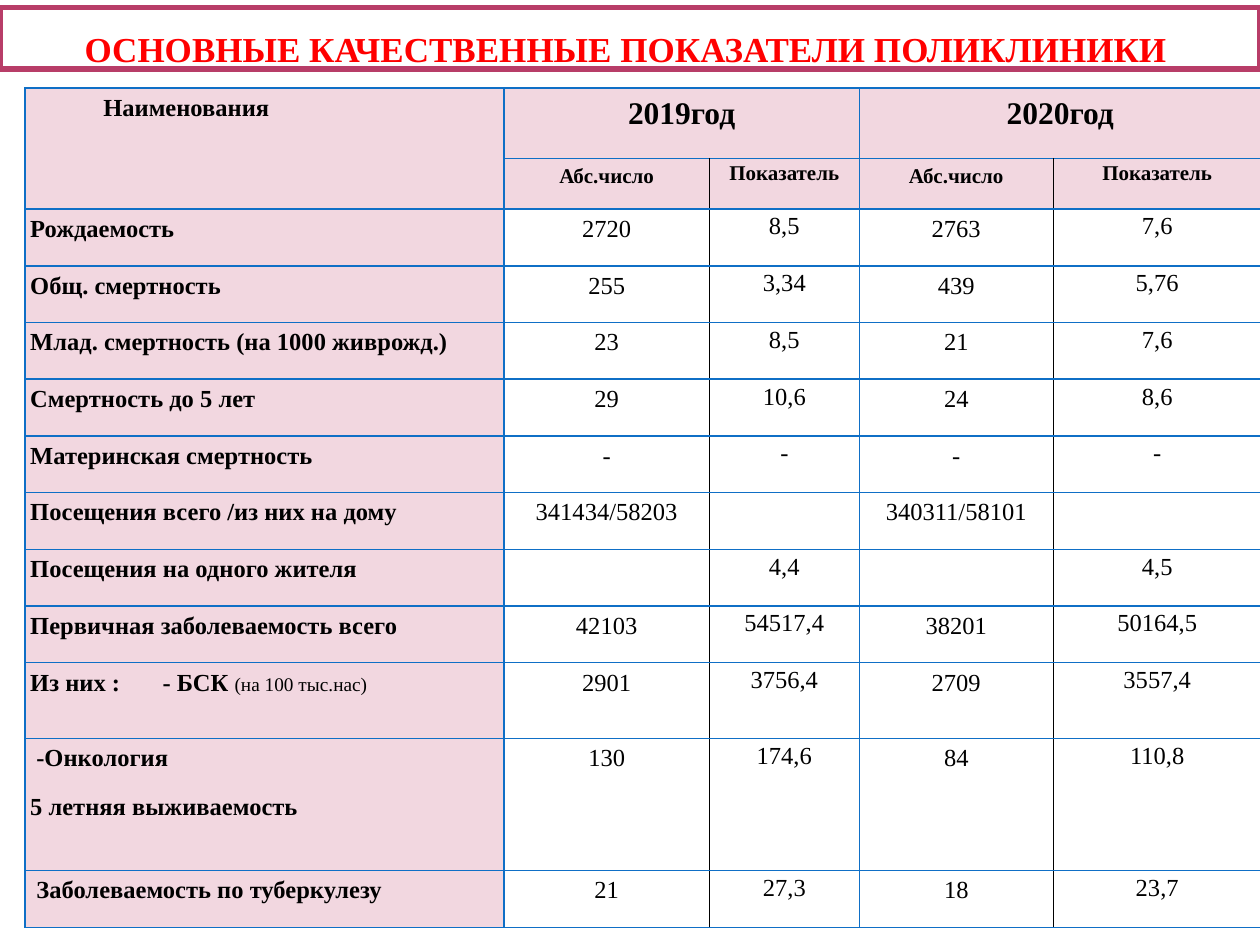
from lxml import etree
from pptx import Presentation
from pptx import util as u
from pptx.dml.color import RGBColor
from pptx.enum import shapes, text
from pptx.oxml import ns

FONT = "Times New Roman"
BLUE, BLACK, PINK = "0F6FC6", "000000", "F2D7E0"


def color(value):
    return RGBColor.from_string(value)


def style(font, size, bold, value=BLACK):
    font.name, font.size, font.bold = FONT, u.Pt(size), bold
    font.color.rgb = color(value)


presentation = Presentation()
presentation.slide_width, presentation.slide_height = u.Inches(10), u.Inches(7.5)
slide = presentation.slides.add_slide(presentation.slide_layouts[6])

title = slide.shapes.add_shape(
    shapes.MSO_SHAPE.RECTANGLE, 0, u.Inches(0.06), presentation.slide_width, u.Inches(0.49))
title.shadow.inherit = False
title.fill.solid()
title.fill.fore_color.rgb = color("FFFFFF")
title.line.color.rgb = color("B83D68")
title.line.width = u.Pt(3.15)
frame = title.text_frame
frame.word_wrap = True
frame.vertical_anchor = text.MSO_ANCHOR.BOTTOM
frame.margin_left = frame.margin_right = u.Inches(0.05)
frame.margin_top = frame.margin_bottom = 0
paragraph = frame.paragraphs[0]
paragraph.text = "ОСНОВНЫЕ КАЧЕСТВЕННЫЕ ПОКАЗАТЕЛИ ПОЛИКЛИНИКИ "
paragraph.alignment = text.PP_ALIGN.CENTER
style(paragraph.font, 20, True, "FF0000")

rows = [
    ["Наименования", "2019год", "", "2020год", ""],
    ["", "Абс.число", "Показатель", "Абс.число", "Показатель"],
    ["Рождаемость", "2720", "8,5", "2763", "7,6"],
    ["Общ. смертность", "255", "3,34", "439", "5,76"],
    ["Млад. смертность (на 1000 живрожд.)", "23", "8,5", "21", "7,6"],
    ["Смертность до 5 лет", "29", "10,6", "24", "8,6"],
    ["Материнская смертность", "-", "-", "-", "-"],
    ["Посещения всего /из них на дому", "341434/58203", "", "340311/58101", ""],
    ["Посещения на одного жителя", "", "4,4", "", "4,5"],
    ["Первичная заболеваемость всего", "42103", "54517,4", "38201", "50164,5"],
    ["Из них :\t- БСК |(на 100 тыс.нас)", "2901", "3756,4", "2709", "3557,4"],
    [" -Онкология\n5 летняя выживаемость", "130", "174,6", "84", "110,8"],
    [" Заболеваемость по туберкулезу", "21", "27,3", "18", "23,7"],
]
widths = [3.8, 1.63, 1.19, 1.54, 1.65]
heights = [0.56, 0.4] + [0.45] * 8 + [0.6, 1.05, 0.45]

table = slide.shapes.add_table(
    len(rows), len(widths), u.Inches(0.2), u.Inches(0.7),
    u.Inches(sum(widths)), u.Inches(sum(heights))).table
table.first_row = table.horz_banding = False
for column, width in zip(table.columns, widths):
    column.width = u.Inches(width)
for row, height in zip(table.rows, heights):
    row.height = u.Inches(height)
table.cell(0, 0).merge(table.cell(1, 0))
table.cell(0, 1).merge(table.cell(0, 2))
table.cell(0, 3).merge(table.cell(0, 4))

for r, values in enumerate(rows):
    for c, value in enumerate(values):
        cell = table.cell(r, c)
        is_rate = c in (2, 4)
        inner_side = {1: "R", 2: "L", 3: "R", 4: "L"}.get(c) if r else None
        properties = cell._tc.get_or_add_tcPr()
        for side in "LRTB":
            line = etree.SubElement(properties, ns.qn(f"a:ln{side}"), w=str(u.Pt(1)))
            fill = etree.SubElement(line, ns.qn("a:solidFill"))
            etree.SubElement(fill, ns.qn("a:srgbClr"), val=BLACK if side == inner_side else BLUE)
        if r < 2 or c == 0:
            cell.fill.solid()
            cell.fill.fore_color.rgb = color(PINK)
        else:
            cell.fill.background()
        cell.margin_left = cell.margin_right = u.Inches(0 if is_rate and r else 0.04)
        cell.margin_top = cell.margin_bottom = u.Inches(0 if is_rate and r else 0.02)
        if r == c == 0:
            cell.margin_left = u.Inches(0.62)
        size = 18 if r == 0 and c else 12 if r == 1 else 14
        bold = r < 2 or c == 0
        frame = cell.text_frame
        for index, content in enumerate(value.split("\n")):
            paragraph = frame.add_paragraph() if index else frame.paragraphs[0]
            if "\t" in content:
                tabs = etree.SubElement(paragraph._p.get_or_add_pPr(), ns.qn("a:tabLst"))
                etree.SubElement(tabs, ns.qn("a:tab"), pos=str(u.Inches(1.05)), algn="l")
            paragraph.alignment = text.PP_ALIGN.CENTER if c else text.PP_ALIGN.LEFT
            paragraph.line_spacing = 1.15
            paragraph.space_after = u.Pt(10)
            label, _, note = content.partition("|")
            if note:
                for part, part_size, part_bold in ((label, size, True), (note, 11, False)):
                    run = paragraph.add_run()
                    run.text = part
                    style(run.font, part_size, part_bold)
            else:
                paragraph.text = label
                style(paragraph.font, size, bold)

presentation.save("out.pptx")
